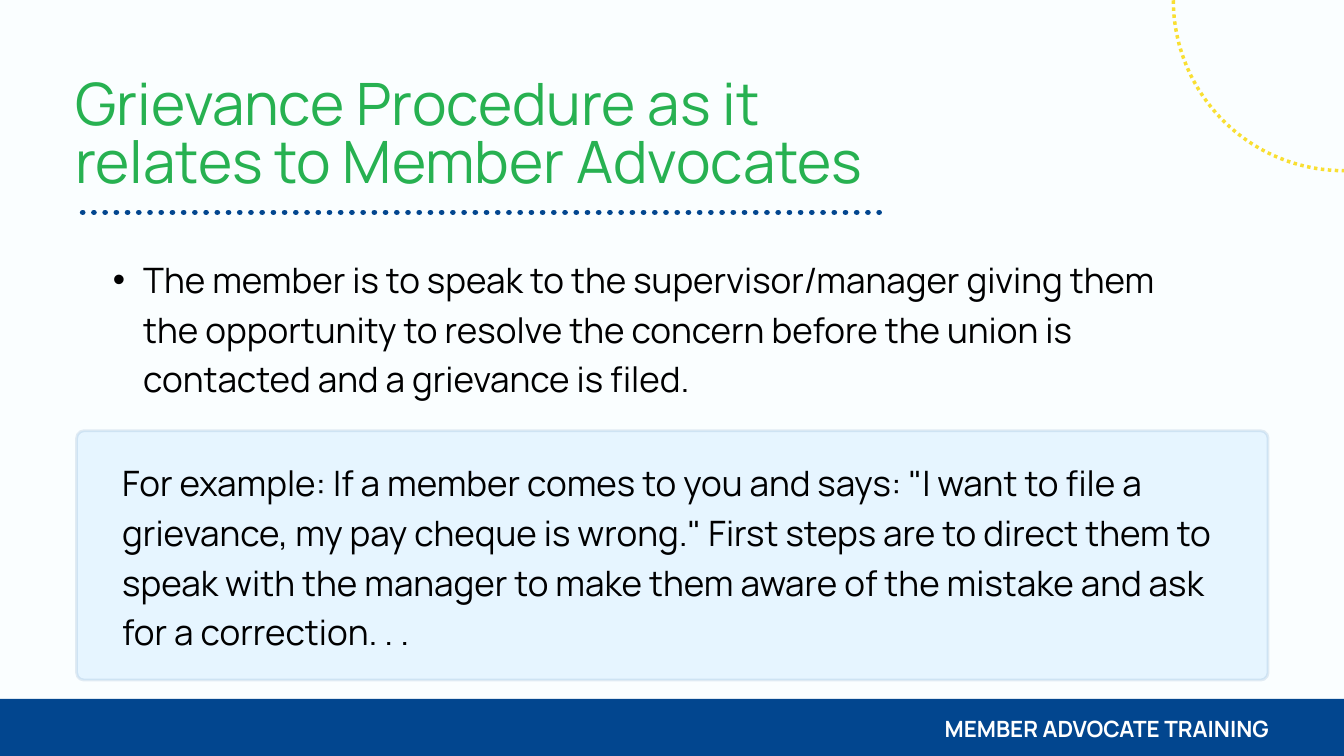
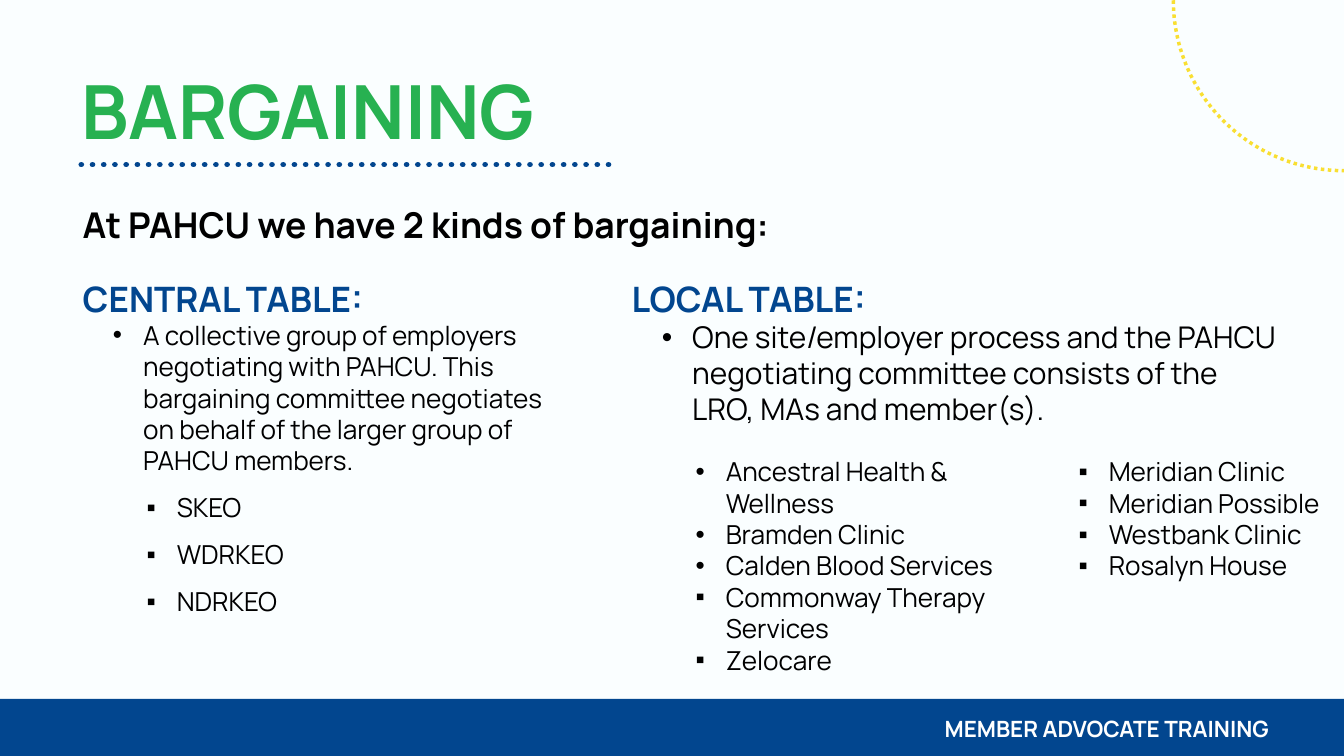
from lxml import etree
from pptx import Presentation
from pptx.dml.color import RGBColor
from pptx.enum import dml, shapes, text
from pptx.oxml.ns import qn
from pptx.util import Pt

FONT = "Manrope"
PAPER, GREEN, BLUE = "FAFEFF", "27B151", "02468F"
YELLOW, SKY, BLACK, WHITE = "F9DF32", "3AAFFF", "000000", "FFFFFF"
WIDE, HIGH = 1440, 810
FOOTER = "MEMBER ADVOCATE TRAINING"
LEAD = 53.2
STEP = 32.4  # hanging indent of every bullet
DOT, BOX = "•", "▪"
DEPTH = {1: 64.8, 2: 100.8}


def para(words, size, color=BLACK, **more):
    return dict(words=words, size=size, color=color, **more)


def head(words):
    return para(words, 37.5, BLUE, bold=True, lead=LEAD)


def items(mark, names, **more):
    return [para(n, 28, level=2, mark=mark, **more) for n in names]


GRIEVANCE = dict(
    layout=1,
    title=para("Grievance Procedure as it relates to Member Advocates",
               62.6, GREEN, lead=62.6),
    place=(80.6, 84.2, 898.6, 127.4),
    rule=(88.6, 949, 227.5),
    bodies=[
        ((88.6, 268.6, 1168.6, 157), [
            para("The member is to speak to the supervisor/manager giving them "
                 "the opportunity to resolve the concern before the union is "
                 "contacted and a grievance is filed.",
                 37.5, level=1, mark=DOT, lead=LEAD)]),
    ],
    panel=(82.1, 461.5, 1276.6, 267.2),
    note=((131, 486.7, 1168.6, 208.8), para(
        'For example: If a member comes to you and says: "I want to file a '
        'grievance, my pay cheque is wrong." First steps are to direct them to '
        "speak with the manager to make them aware of the mistake and ask for "
        "a correction. . .", 37.5, lead=LEAD)),
)

BARGAINING = dict(
    layout=4,
    title=para("BARGAINING", 80, GREEN, bold=True, lead=80),
    place=(87.1, 85.7, 640, 80.6),
    rule=(87.1, 653.8, 176.4),
    bodies=[
        ((88.6, 288.7, 523.4, 370), [
            head("CENTRAL TABLE:"),
            para("A collective group of employers negotiating with PAHCU. This "
                 "bargaining committee negotiates on behalf of the larger "
                 "group of PAHCU members.", 28, level=1, mark=DOT),
            *items(BOX, ["SKEO", "WDRKEO", "NDRKEO"], lead=1.5)]),
        ((676.8, 288.7, 697, 170), [
            head("LOCAL TABLE:"),
            para("One site/employer process and the PAHCU negotiating "
                 "committee consists of the LRO, MAs and member(s).",
                 32, level=1, mark=DOT)]),
        ((676.8, 488.2, 428.4, 237.6), [
            *items(DOT, ["Ancestral Health & Wellness", "Bramden Clinic",
                         "Calden Blood Services"]),
            *items(BOX, ["Commonway Therapy Services", "Zelocare"])]),
        ((1087.2, 488.2, 341.3, 135.4), items(
            BOX, ["Meridian Clinic", "Meridian Possible", "Westbank Clinic",
                  "Rosalyn House"])),
    ],
    note=((88.6, 210.2, 1270.8, 51.8), para(
        "At PAHCU we have 2 kinds of bargaining:", 38, bold=True, lead=LEAD)),
)


def rgb(code):
    return RGBColor.from_string(code)


def fade(fill, percent):
    tint = fill._xPr.find(qn("a:solidFill"))[0]
    etree.SubElement(tint, qn("a:alpha"), val=str(percent * 1000))


def outline(line, color, width, dotted=False):
    line.fill.solid()
    line.fill.fore_color.rgb = rgb(color)
    line.width = Pt(width)
    if dotted:
        line.dash_style = dml.MSO_LINE.ROUND_DOT


def move(shape, place):
    shape.left, shape.top, shape.width, shape.height = map(Pt, place)


def indent(par, level, mark):
    props = par._p.get_or_add_pPr()
    props.set("marL", str(Pt(DEPTH.get(level, 0))))
    props.set("indent", str(Pt(-STEP if mark else 0)))
    if mark:
        etree.SubElement(props, qn("a:buFont"), typeface="Arial")
        etree.SubElement(props, qn("a:buChar"), char=mark)
    else:
        etree.SubElement(props, qn("a:buNone"))


def write(shape, place, paras, align=text.PP_ALIGN.LEFT):
    move(shape, place)
    frame = shape.text_frame
    frame.word_wrap = True
    frame.auto_size = text.MSO_AUTO_SIZE.NONE
    frame.vertical_anchor = text.MSO_ANCHOR.TOP
    frame.margin_left = frame.margin_right = 0
    frame.margin_top = frame.margin_bottom = 0
    for i, item in enumerate(paras):
        par = frame.add_paragraph() if i else frame.paragraphs[0]
        level, lead = item.get("level", 0), item.get("lead", 1.0)
        par.level = level
        par.alignment = align
        par.space_before = par.space_after = Pt(0)
        par.line_spacing = Pt(lead) if lead > 5 else lead
        indent(par, level, item.get("mark"))
        run = par.add_run()
        run.text = item["words"]
        run.font.name = FONT
        run.font.size = Pt(item["size"])
        run.font.bold = item.get("bold", False)
        run.font.color.rgb = rgb(item["color"])


def label(slide, place, item, align=text.PP_ALIGN.LEFT):
    box = slide.shapes.add_textbox(*map(Pt, place))
    write(box, place, [item], align)


def draw(slide, kind, place, fill=None):
    shape = slide.shapes.add_shape(kind, *map(Pt, place))
    shape.shadow.inherit = False
    if fill:
        shape.fill.solid()
        shape.fill.fore_color.rgb = rgb(fill)
    else:
        shape.fill.background()
    shape.line.fill.background()
    return shape


def underline(slide, left, right, y):
    """Draw a rule of round dots under the title."""
    line = slide.shapes.add_connector(
        shapes.MSO_CONNECTOR.STRAIGHT, *map(Pt, (left, y, right, y)))
    outline(line.line, BLUE, 6, dotted=True)
    props = line._element.spPr
    props.find(qn("a:ln")).set("cap", "rnd")
    etree.SubElement(props, qn("a:effectLst"))


def trim(slide):
    """Add the footer band and the dotted corner ring."""
    kind = shapes.MSO_SHAPE
    top, reach = 748.8, 182.9
    draw(slide, kind.RECTANGLE, (0, top, WIDE, HIGH - top), BLUE)
    ring = draw(slide, kind.OVAL, (WIDE - reach, -reach, 2 * reach, 2 * reach))
    outline(ring.line, YELLOW, 3.75, dotted=True)
    label(slide, (871.2, 761.8, 488.2, 31.7),
          para(FOOTER, 24, WHITE, bold=True, lead=33.6), text.PP_ALIGN.RIGHT)


def panel(slide, place):
    card = draw(slide, shapes.MSO_SHAPE.ROUNDED_RECTANGLE, place, SKY)
    card.adjustments[0] = 0.03
    fade(card.fill, 10)
    outline(card.line, BLUE, 3)
    fade(card.line.fill, 10)


def build(deck, page):
    slide = deck.slides.add_slide(deck.slide_layouts[page["layout"]])
    title, *bodies = slide.placeholders
    write(title, page["place"], [page["title"]])
    for body, (place, paras) in zip(bodies, page["bodies"]):
        write(body, place, paras)
    underline(slide, *page["rule"])
    trim(slide)
    if "panel" in page:
        panel(slide, page["panel"])
    label(slide, *page["note"])


def main():
    deck = Presentation()
    deck.slide_width, deck.slide_height = Pt(WIDE), Pt(HIGH)
    back = deck.slide_master.background.fill
    back.solid()
    back.fore_color.rgb = rgb(PAPER)
    for page in (GRIEVANCE, BARGAINING):
        build(deck, page)
    deck.save("out.pptx")


if __name__ == "__main__":
    main()
